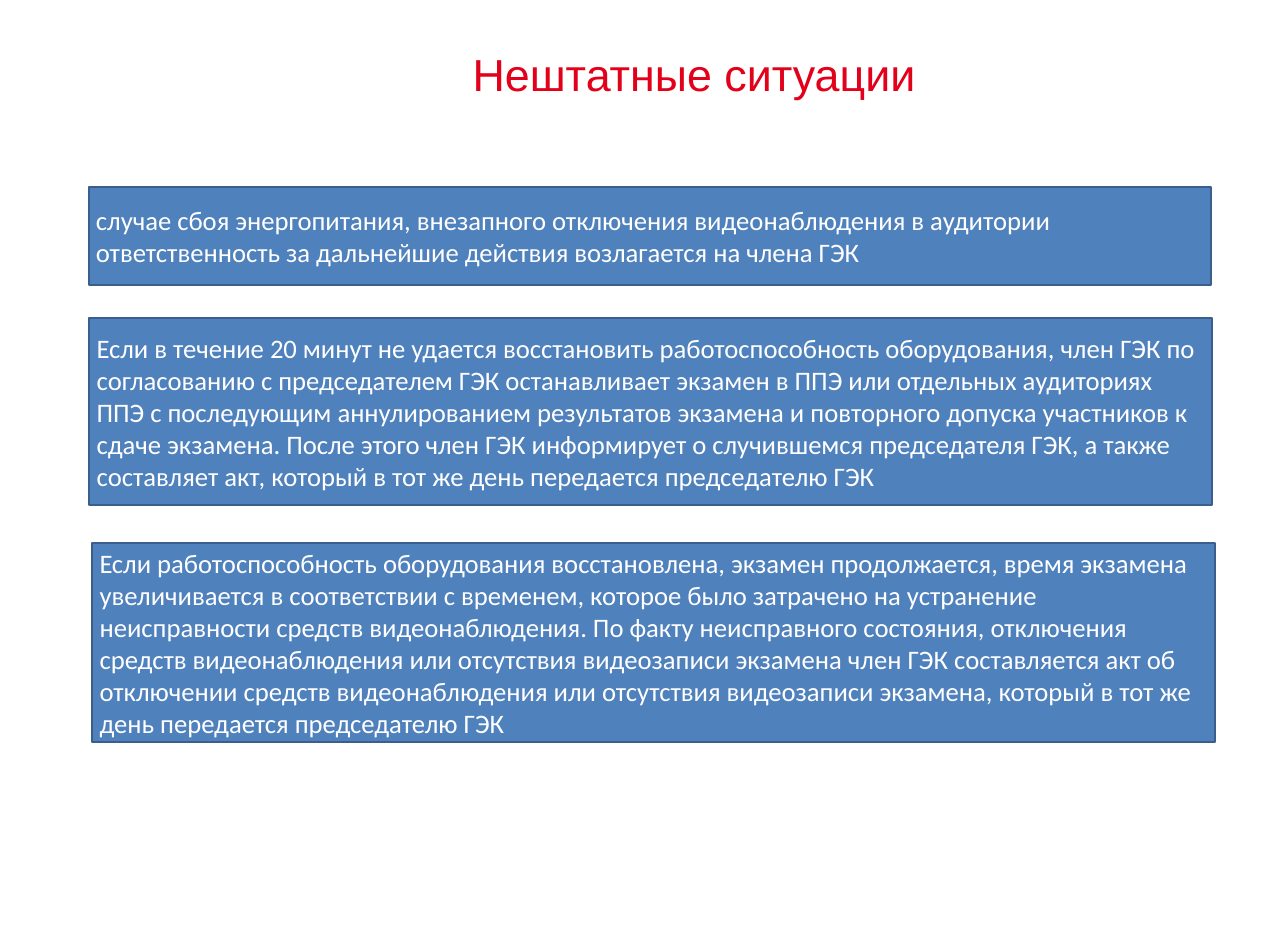
from pptx import Presentation
from pptx.dml.color import RGBColor
from pptx.enum import shapes, text
from pptx.util import Pt

COLORS = {"title": "E2001A", "fill": "4F81BD", "border": "3A5F8C", "text": "FFFFFF"}

TITLE_BOX = (244.8, 0, 886.3, 144)
RULE_WIDTH = 1102.3
# left, top, height, wording
RULES = [
    (87.1, 183.6, 95.8,
     "случае сбоя энергопитания, внезапного отключения видеонаблюдения в аудитории "
     "ответственность за дальнейшие действия возлагается на члена ГЭК"),
    (87.8, 312.5, 182.9,
     "Если в течение 20 минут не удается восстановить работоспособность оборудования, "
     "член ГЭК по согласованию с председателем ГЭК останавливает экзамен в ППЭ или "
     "отдельных аудиториях ППЭ с последующим аннулированием результатов экзамена и "
     "повторного допуска участников к сдаче экзамена. После этого член ГЭК информирует "
     "о случившемся председателя ГЭК, а также составляет акт, который в тот же день "
     "передается председателю ГЭК"),
    (90.7, 532.8, 195.8,
     "Если работоспособность оборудования восстановлена, экзамен продолжается, время "
     "экзамена увеличивается в соответствии с временем, которое было затрачено на "
     "устранение неисправности средств видеонаблюдения. По факту неисправного состояния, "
     "отключения средств видеонаблюдения или отсутствия видеозаписи экзамена член ГЭК "
     "составляется акт об отключении средств видеонаблюдения или отсутствия видеозаписи "
     "экзамена, который в тот же день передается председателю ГЭК"),
]


def color(name):
    return RGBColor.from_string(COLORS[name])


def write(shape, wording, size, font, color_name, align):
    """Fill a shape with one vertically centred, wrapped paragraph."""
    frame = shape.text_frame
    frame.word_wrap = True
    frame.auto_size = text.MSO_AUTO_SIZE.NONE
    frame.vertical_anchor = text.MSO_ANCHOR.MIDDLE
    para = frame.paragraphs[0]
    para.alignment = align
    span = para.add_run()
    span.text = wording
    span.font.size = Pt(size)
    span.font.name = font
    span.font.color.rgb = color(color_name)


def place_title(slide, box):
    title = slide.shapes.title
    title.left, title.top, title.width, title.height = map(Pt, box)
    frame = title.text_frame
    frame.margin_left = frame.margin_right = Pt(12.2)
    frame.margin_top = frame.margin_bottom = Pt(6.5)
    write(title, "Нештатные ситуации ", 44, "Arial", "title", text.PP_ALIGN.CENTER)


def add_rule(slide, box, wording):
    panel = slide.shapes.add_shape(shapes.MSO_SHAPE.RECTANGLE, *map(Pt, box))
    panel.shadow.inherit = False
    panel.fill.solid()
    panel.fill.fore_color.rgb = color("fill")
    panel.line.color.rgb = color("border")
    panel.line.width = Pt(2)
    write(panel, wording, 26.2, "Calibri", "text", text.PP_ALIGN.LEFT)


def main():
    deck = Presentation()
    deck.slide_width, deck.slide_height = Pt(1265), Pt(920.9)
    slide = deck.slides.add_slide(deck.slide_layouts.get_by_name("Title Only"))
    place_title(slide, TITLE_BOX)
    for left, top, height, wording in RULES:
        add_rule(slide, (left, top, RULE_WIDTH, height), wording)
    deck.save("out.pptx")


if __name__ == "__main__":
    main()
